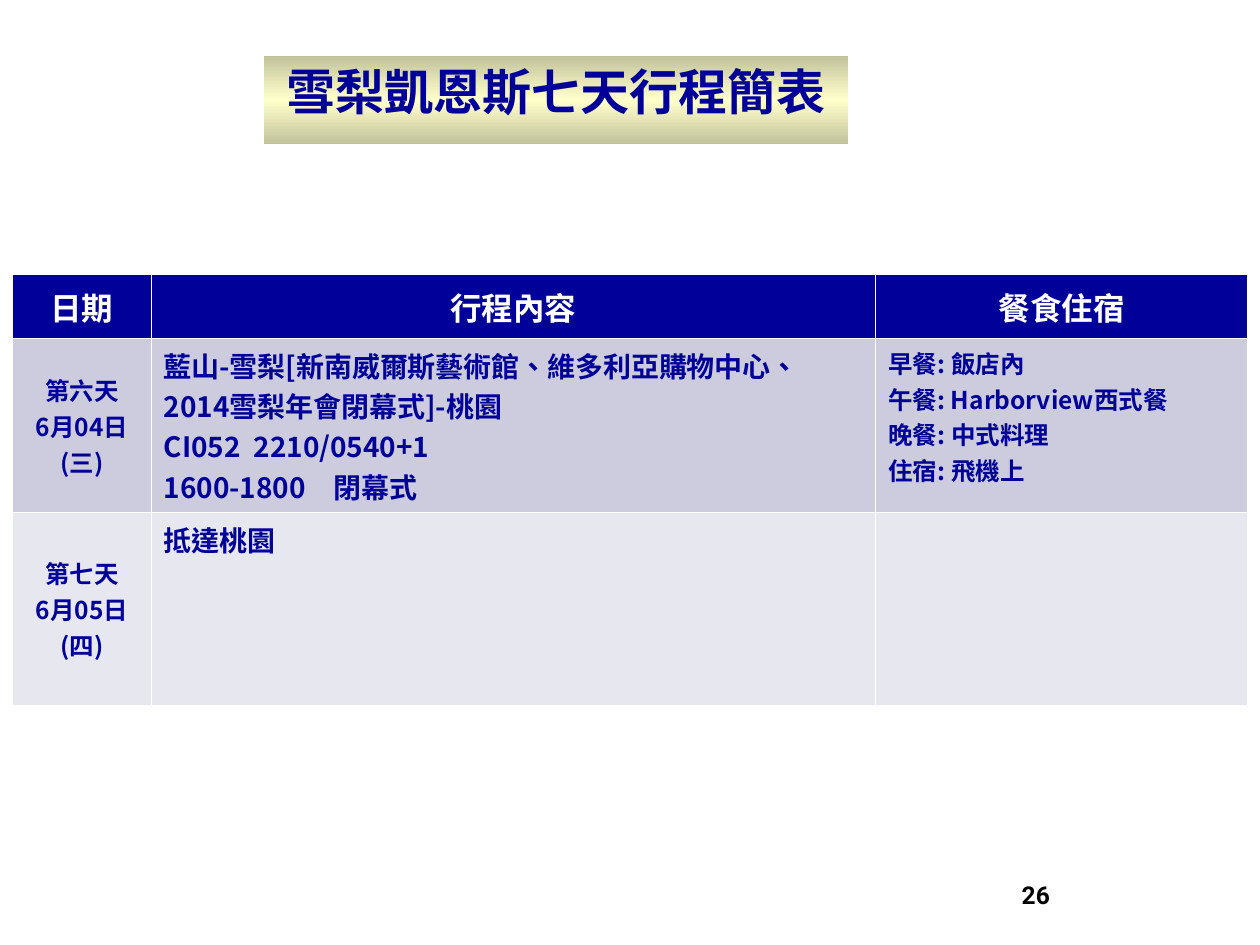
from lxml import etree
from pptx import Presentation, util as u
from pptx.dml.color import RGBColor
from pptx.enum import shapes, text
from pptx.oxml.ns import qn

# Content
TITLE = "雪梨凱恩斯七天行程簡表"
PAGE_NUMBER = "26"
HEADER = ["日期", "行程內容", "餐食住宿"]
DAYS = [
    (["第六天", "6月04日", "(三)"],
     ["藍山-雪梨[新南威爾斯藝術館、維多利亞購物中心、2014雪梨年會閉幕式]-桃園",
      "CI052\t2210/0540+1", "1600-1800\t閉幕式"],
     ["早餐: 飯店內", "午餐: Harborview西式餐", "晚餐: 中式料理", "住宿: 飛機上"]),
    (["第七天", "6月05日", "(四)"], ["抵達桃園"], []),
]
TAB_STOPS = {"CI052\t2210/0540+1": 51.5, "1600-1800\t閉幕式": 97}

# Style
NAVY = RGBColor(0x01, 0x01, 0x99)
WHITE = RGBColor(0xFF, 0xFF, 0xFF)
BLACK = RGBColor(0, 0, 0)
CREAM = RGBColor(0xFF, 0xFF, 0xCC)
KHAKI = RGBColor(0xC2, 0xC2, 0x9B)
BANDS = [RGBColor(0xCC, 0xCC, 0xDE), RGBColor(0xE7, 0xE7, 0xEF)]
CJK_FONT = "Noto Sans CJK SC"
COLUMN_WIDTHS = [79.2, 414, 212.4]
ROW_HEIGHTS = [36.5, 99.5, 110]
CENTER, LEFT, RIGHT = text.PP_ALIGN.CENTER, text.PP_ALIGN.LEFT, text.PP_ALIGN.RIGHT


def write(frame, lines, size=14, color=NAVY, font=CJK_FONT, align=LEFT):
    for index, line in enumerate(lines):
        paragraph = frame.paragraphs[0] if index == 0 else frame.add_paragraph()
        paragraph.alignment = align
        if line in TAB_STOPS:
            tabs = etree.SubElement(paragraph._p.get_or_add_pPr(), qn("a:tabLst"))
            etree.SubElement(tabs, qn("a:tab"), pos=str(u.Pt(TAB_STOPS[line])), algn="l")
        run = paragraph.add_run()
        run.text = line
        run.font.size = u.Pt(size)
        run.font.bold = True
        run.font.color.rgb = color
        run.font.name = font
        properties = run._r.get_or_add_rPr()
        properties.set("lang", "zh-TW")
        etree.SubElement(properties, qn("a:ea"), typeface=CJK_FONT)


def set_borders(cell, width=0.5):
    properties = cell._tc.get_or_add_tcPr()
    for index, side in enumerate("LRTB"):
        line = etree.Element(qn("a:ln" + side), w=str(u.Pt(width)))
        solid = etree.SubElement(line, qn("a:solidFill"))
        etree.SubElement(solid, qn("a:srgbClr"), val=str(WHITE))
        properties.insert(index, line)


def set_gradient(shape, colors):
    shape.fill.gradient()
    shape.fill.gradient_angle = 270
    stops = shape._element.spPr.find(qn("a:gradFill")).find(qn("a:gsLst"))
    for stop in list(stops):
        stops.remove(stop)
    for index, color in enumerate(colors):
        position = 100000 * index // (len(colors) - 1)
        stop = etree.SubElement(stops, qn("a:gs"), pos=str(position))
        etree.SubElement(stop, qn("a:srgbClr"), val=str(color))


presentation = Presentation()
presentation.slide_width, presentation.slide_height = u.Pt(720), u.Pt(540)
slide = presentation.slides.add_slide(presentation.slide_layouts[6])

# Page number
number = slide.shapes.add_textbox(u.Pt(524.2), u.Pt(485.6), u.Pt(82.8), u.Pt(37.4))
number.text_frame.word_wrap = True
number.text_frame.vertical_anchor = text.MSO_ANCHOR.BOTTOM
write(number.text_frame, [PAGE_NUMBER], color=BLACK, font="Roboto", align=RIGHT)

# Title band
title = slide.shapes.add_shape(shapes.MSO_SHAPE.RECTANGLE,
                               u.Pt(150.5), u.Pt(31.7), u.Pt(334.3), u.Pt(51))
title.shadow.inherit = False
set_gradient(title, [KHAKI, CREAM, KHAKI])
title.line.color.rgb = WHITE
title.line.width = u.Pt(0.75)
title.text_frame.word_wrap = True
title.text_frame.vertical_anchor = text.MSO_ANCHOR.TOP
write(title.text_frame, [TITLE], size=28, font="Arial", align=CENTER)

# Itinerary table
table = slide.shapes.add_table(len(DAYS) + 1, len(HEADER), u.Pt(7.2), u.Pt(157),
                               u.Pt(sum(COLUMN_WIDTHS)), u.Pt(sum(ROW_HEIGHTS))).table
for column, width in zip(table.columns, COLUMN_WIDTHS):
    column.width = u.Pt(width)
for row, height in zip(table.rows, ROW_HEIGHTS):
    row.height = u.Pt(height)

for column, label in enumerate(HEADER):
    cell = table.cell(0, column)
    cell.fill.solid()
    cell.fill.fore_color.rgb = NAVY
    cell.vertical_anchor = text.MSO_ANCHOR.MIDDLE
    set_borders(cell)
    write(cell.text_frame, [label], size=18, color=WHITE, align=CENTER)

for row, (day, band) in enumerate(zip(DAYS, BANDS), start=1):
    for column, lines in enumerate(day):
        cell = table.cell(row, column)
        cell.fill.solid()
        cell.fill.fore_color.rgb = band
        set_borders(cell)
        if column == 0:
            cell.vertical_anchor = text.MSO_ANCHOR.MIDDLE
        write(cell.text_frame, lines, size=16 if column == 1 else 14,
              align=CENTER if column == 0 else LEFT)

presentation.save("out.pptx")
